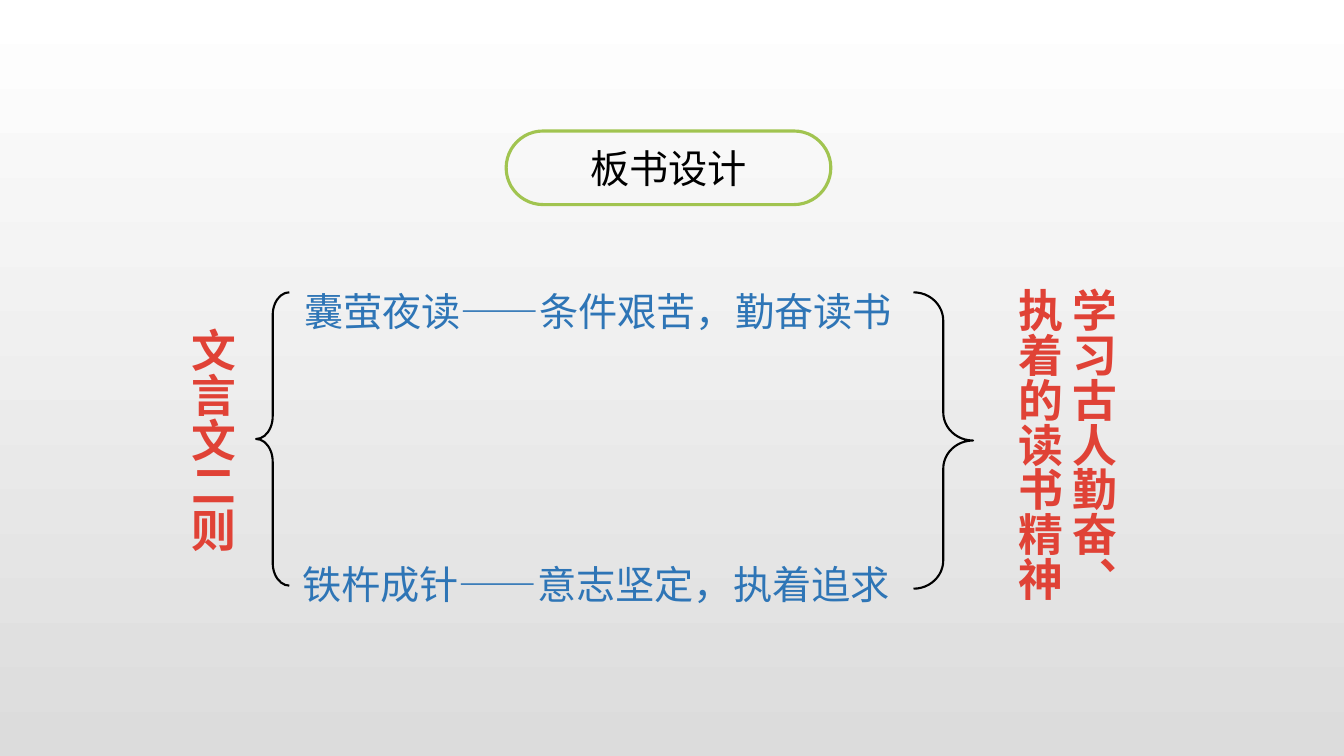
"""Build the blackboard-plan slide for two classical Chinese stories."""
from pptx import Presentation
from pptx.dml.color import RGBColor
from pptx.enum.shapes import MSO_SHAPE
from pptx.enum.text import MSO_ANCHOR, PP_ALIGN
from pptx.oxml.ns import qn
from pptx.util import Inches, Pt

FONT = "Noto Sans CJK SC"
RED = RGBColor(0xE0, 0x42, 0x36)
BLUE = RGBColor(0x2E, 0x75, 0xB6)
GREEN = RGBColor(0xA1, 0xC4, 0x50)
BLACK = RGBColor(0, 0, 0)
WHITE = RGBColor(0xFF, 0xFF, 0xFF)
GREY = RGBColor(0xDC, 0xDC, 0xDC)

TITLE = ("板书设计", (5.02, 1.3, 3.22, 0.73))
STORIES = [
    ("囊萤夜读——条件艰苦，勤奋读书", (2.92, 2.57, 6.14, 0.72)),
    ("铁杵成针——意志坚定，执着追求", (2.9, 5.28, 6.21, 0.72)),
]
COLUMNS = [
    ("文言文二则", (1.68, 3.16, 0.74, 2.31), False),
    ("学习古人勤奋、执着的读书精神", (9.88, 2.76, 1.28, 3.5), True),
]
BRACES = [
    ((2.54, 2.9, 0.33, 2.91), 0.686, 0),
    ((9.06, 2.9, 0.59, 2.94), 0.475, 180),
]


def write(sp, text, size=28, color=BLACK, bold=False, spacing=None,
          align=None, vertical=False, wrap=True):
    tf = sp.text_frame
    tf.word_wrap = wrap
    if vertical:
        tf._txBody.bodyPr.set("vert", "eaVert")
    p = tf.paragraphs[0]
    p.alignment = align
    p.line_spacing = spacing
    r = p.add_run()
    r.text = text
    r.font.size = Pt(size)
    r.font.bold = bold
    r.font.color.rgb = color
    r.font.name = FONT
    ea = r._r.get_or_add_rPr().makeelement(qn("a:ea"), {"typeface": FONT})
    r._r.rPr.find(qn("a:latin")).addnext(ea)


def add_outline(s, kind, box, adjust, color, width):
    sp = s.shapes.add_shape(kind, *map(Inches, box))
    sp.shadow.inherit = False
    sp.fill.background()
    sp.line.color.rgb = color
    sp.line.width = Pt(width)
    sp.adjustments[0] = adjust
    return sp


def main():
    prs = Presentation()
    prs.slide_width, prs.slide_height = Inches(13.33), Inches(7.5)
    s = prs.slides.add_slide(prs.slide_layouts[6])
    fill = s.background.fill
    fill.gradient()
    fill.gradient_angle = 270
    for stop, color, position in zip(fill.gradient_stops, (WHITE, GREY), (0, 1)):
        stop.color.rgb = color
        stop.position = position

    for text, box in STORIES:
        write(s.shapes.add_textbox(*map(Inches, box)), text,
              color=BLUE, spacing=1.5)
    for text, box, wrap in COLUMNS:
        write(s.shapes.add_textbox(*map(Inches, box)), text, size=32,
              color=RED, bold=True, vertical=True, wrap=wrap)
    for box, adjust, rotation in BRACES:
        brace = add_outline(s, MSO_SHAPE.LEFT_BRACE, box, adjust, BLACK, 1.5)
        brace.rotation = rotation

    text, box = TITLE
    title = add_outline(s, MSO_SHAPE.ROUNDED_RECTANGLE, box, 0.5, GREEN, 2.25)
    title.text_frame.vertical_anchor = MSO_ANCHOR.MIDDLE
    write(title, text, align=PP_ALIGN.CENTER)
    prs.save("out.pptx")


if __name__ == "__main__":
    main()
